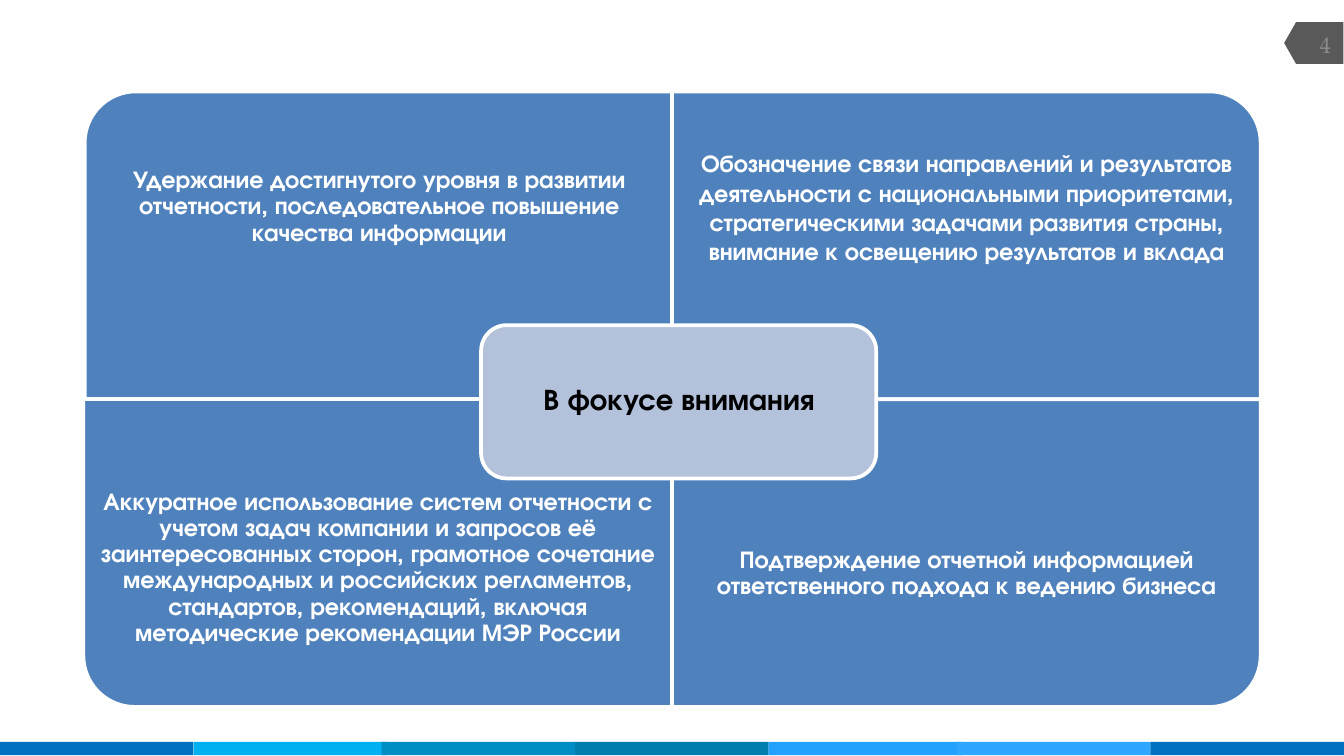
from dataclasses import dataclass

from pptx import Presentation
from pptx.dml.color import RGBColor
from pptx.enum import shapes, text
from pptx.util import Inches, Pt


@dataclass(frozen=True)
class Theme:
    panel: str = "4F81BD"
    center: str = "B3C1DB"
    white: str = "FFFFFF"
    black: str = "000000"
    tag: str = "595959"
    number: str = "8C8C8C"
    stripes: tuple = ("0070C0", "00B0F0", "008DC3", "007EAE",
                      "23A1FF", "2FA6FF", "0070C0")
    body_font: str = "TeX Gyre Adventor"
    number_font: str = "TeX Gyre Pagella"
    body_size: int = 13
    center_size: int = 16
    number_size: int = 12
    border: int = 2


class SlideBuilder:
    def __init__(self, slide, theme):
        self.slide = slide
        self.theme = theme

    def shape(self, kind, left, top, width, height, fill, rotation=0, border=False):
        """Add a filled shape; the box is the one before rotation."""
        shape = self.slide.shapes.add_shape(
            kind, Inches(left), Inches(top), Inches(width), Inches(height))
        shape.shadow.inherit = False
        shape.rotation = rotation
        shape.fill.solid()
        shape.fill.fore_color.rgb = RGBColor.from_string(fill)
        if border:
            shape.line.color.rgb = RGBColor.from_string(self.theme.white)
            shape.line.width = Pt(self.theme.border)
        else:
            shape.line.fill.background()

    def panel(self, left, top, width, height, rotation):
        """Add a panel by its visible box, whose rounded corner turns with rotation."""
        if rotation % 180:
            left += (width - height) / 2
            top += (height - width) / 2
            width, height = height, width
        self.shape(shapes.MSO_SHAPE.ROUND_1_RECTANGLE, left, top, width, height,
                   self.theme.panel, rotation, border=True)

    def label(self, left, top, width, height, words, size, color, font=None,
              bold=True, align=text.PP_ALIGN.CENTER,
              anchor=text.MSO_ANCHOR.MIDDLE, inset=0.1, spacing=0.9):
        box = self.slide.shapes.add_textbox(
            Inches(left), Inches(top), Inches(width), Inches(height))
        frame = box.text_frame
        frame.word_wrap = True
        frame.vertical_anchor = anchor
        frame.margin_left = frame.margin_right = Inches(inset)
        frame.margin_top = frame.margin_bottom = Inches(inset)
        frame.text = words
        paragraph = frame.paragraphs[0]
        paragraph.alignment = align
        paragraph.line_spacing = spacing
        for run in paragraph.runs:
            run.font.name = font or self.theme.body_font
            run.font.size = Pt(size)
            run.font.bold = bold
            run.font.color.rgb = RGBColor.from_string(color)


def add_stripes(builder):
    lefts = (0, 1.44, 2.84, 4.28, 5.72, 7.12, 8.56)
    for left, color in zip(lefts, builder.theme.stripes):
        builder.shape(shapes.MSO_SHAPE.RECTANGLE, left, 5.52, 1.44, 0.1, color)


def add_page_number(builder):
    theme = builder.theme
    builder.shape(shapes.MSO_SHAPE.FLOWCHART_OFFPAGE_CONNECTOR,
                  9.62, 0.1, 0.31, 0.44, theme.tag, rotation=90)
    builder.label(9.56, 0.18, 0.44, 0.3, "4", theme.number_size, theme.number,
                  font=theme.number_font, bold=False,
                  align=text.PP_ALIGN.RIGHT, spacing=1)


def add_focus_matrix(builder):
    theme = builder.theme
    left, middle, top, center = 0.62, 5, 0.68, 2.97
    width, height = 4.38, 2.29
    text_height, lower_text = 1.72, 3.54
    top_anchor, middle_anchor = text.MSO_ANCHOR.TOP, text.MSO_ANCHOR.MIDDLE
    quadrants = (
        (left + 0.01, top, 270, top, text_height, middle_anchor, 0.9,
         "Удержание достигнутого уровня в развитии отчетности, "
         "последовательное повышение качества информации"),
        (middle, top, 0, top, text_height, middle_anchor, 1,
         "Обозначение связи направлений и результатов деятельности "
         "с национальными приоритетами, стратегическими задачами развития "
         "страны, внимание к освещению результатов и вклада"),
        (left, center, 180, lower_text, text_height, top_anchor, 0.9,
         "Аккуратное использование систем отчетности с учетом задач компании "
         "и запросов её заинтересованных сторон, грамотное сочетание "
         "международных и российских регламентов, стандартов, рекомендаций, "
         "включая методические рекомендации МЭР России"),
        (middle, center, 90, lower_text, 1.45, middle_anchor, 0.9,
         "Подтверждение отчетной информацией ответственного подхода "
         "к ведению бизнеса"),
    )
    for x, y, rotation, text_top, box_height, anchor, spacing, words in quadrants:
        builder.panel(x, y, width, height, rotation)
        builder.label(x, text_top, width, box_height, words, theme.body_size,
                      theme.white, anchor=anchor, spacing=spacing)

    builder.shape(shapes.MSO_SHAPE.ROUNDED_RECTANGLE, 3.58, 2.42, 2.94, 1.14,
                  theme.center, border=True)
    builder.label(3.64, 2.47, 2.83, 1.03, "В фокусе внимания",
                  theme.center_size, theme.black, inset=0.07)


def main():
    presentation = Presentation()
    presentation.slide_width = Inches(10)
    presentation.slide_height = Inches(10) * 9 // 16
    slide = presentation.slides.add_slide(presentation.slide_layouts[6])
    builder = SlideBuilder(slide, Theme())
    add_stripes(builder)
    add_page_number(builder)
    add_focus_matrix(builder)
    presentation.save("out.pptx")


if __name__ == "__main__":
    main()
